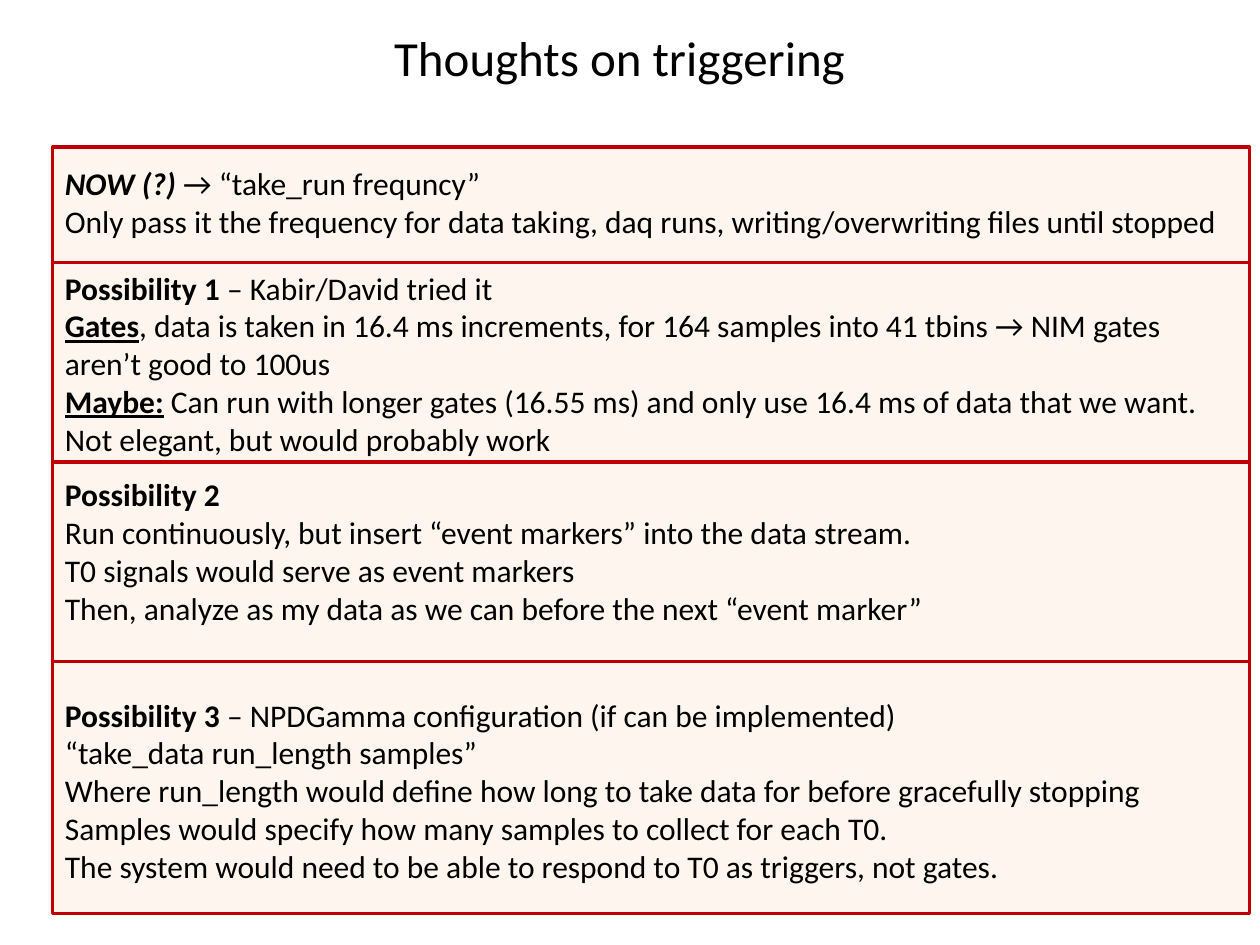
import pptx
import pptx.util
import pptx.dml.color
import pptx.enum.shapes
import pptx.enum.text
import pptx.oxml.ns
import pptx.oxml.xmlchemy

BLACK, RED, ORANGE = "000000", "C00000", "FAC090"
PLAIN, BOLD, BOLD_ITALIC, BOLD_UNDERLINE = "", "b", "bi", "bu"

SECTIONS = [
    (6, 684, [
        [("NOW (?) ", BOLD_ITALIC), ("→ “take_run frequncy”", PLAIN)],
        [("Only pass it the frequency for data taking, daq runs, "
          "writing/overwriting files until stopped", PLAIN)],
    ]),
    (66, 672, [
        [("Possibility 1", BOLD), (" – Kabir/David tried it", PLAIN)],
        [("Gates", BOLD_UNDERLINE),
         (", data is taken in 16.4 ms increments, for 164 samples into 41 tbins "
          "→ NIM gates aren’t good to 100us", PLAIN)],
        [("Maybe:", BOLD_UNDERLINE),
         (" Can run with longer gates (16.55 ms) and only use 16.4 ms of data "
          "that we want. Not elegant, but would probably work", PLAIN)],
    ]),
    (184, 672, [
        [("Possibility 2", BOLD)],
        [("Run continuously, but insert “event markers” into the data stream.", PLAIN)],
        [("T0 signals would serve as event markers", PLAIN)],
        [("Then, analyze as my data as we can before the next “event marker”", PLAIN)],
    ]),
    (310, 672, [
        [("Possibility 3", BOLD),
         (" – NPDGamma configuration (if can be implemented)", PLAIN)],
        [("“take_data run_length samples”", PLAIN)],
        [("Where run_length would define how long to take data for before "
          "gracefully stopping", PLAIN)],
        [("Samples would specify how many samples to collect for each T0.", PLAIN)],
        [("The system would need to be able to respond to T0 as triggers, not gates.",
          PLAIN)],
    ]),
]
SECTION_HEIGHTS = [51, 117, 94, 117]
DIVIDERS = [66, 180, 294]


def points(*values):
    """Return the lengths in points."""
    return [pptx.util.Pt(value) for value in values]


def color(value):
    """Return the colour for a hex string."""
    return pptx.dml.color.RGBColor.from_string(value)


def set_line(line):
    """Give a line the red border style."""
    line.color.rgb = color(RED)
    line.width = pptx.util.Pt(2)


def add_text(slide, left, top, width, height, paragraphs, size, alignment=None):
    """Add a wrapping text box made of styled runs."""
    box = slide.shapes.add_textbox(*points(left, top, width, height))
    frame = box.text_frame
    frame.word_wrap = True
    frame.auto_size = pptx.enum.text.MSO_AUTO_SIZE.SHAPE_TO_FIT_TEXT
    for index, runs in enumerate(paragraphs):
        paragraph = frame.add_paragraph() if index else frame.paragraphs[0]
        paragraph.alignment = alignment
        for text, style in runs:
            run = paragraph.add_run()
            run.text = text
            run.font.name = "Calibri"
            run.font.size = pptx.util.Pt(size)
            run.font.color.rgb = color(BLACK)
            run.font.bold = "b" in style
            run.font.italic = "i" in style
            run.font.underline = "u" in style


def add_divider(slide, left, top, width):
    """Add a horizontal line without shadow."""
    connector = slide.shapes.add_connector(
        pptx.enum.shapes.MSO_CONNECTOR.STRAIGHT, *points(left, top, left + width, top))
    set_line(connector.line)
    connector._element.spPr.append(pptx.oxml.xmlchemy.OxmlElement("a:effectLst"))


def add_title(slide, left, top, width, height):
    """Add the centred slide title."""
    add_text(slide, left, top, width, height, [[("Thoughts on triggering", PLAIN)]],
             28, pptx.enum.text.PP_ALIGN.CENTER)


def add_panel(slide, left, top, width, height):
    """Add the tinted panel with its dividers and sections."""
    panel = slide.shapes.add_shape(
        pptx.enum.shapes.MSO_SHAPE.RECTANGLE, *points(left, top, width, height))
    panel.shadow.inherit = False
    panel.fill.solid()
    panel.fill.fore_color.rgb = color(ORANGE)
    fill = panel._element.spPr.find(pptx.oxml.ns.qn("a:solidFill"))
    alpha = pptx.oxml.xmlchemy.OxmlElement("a:alpha")
    alpha.set("val", "15000")
    fill[0].append(alpha)
    set_line(panel.line)
    for offset in DIVIDERS:
        add_divider(slide, left, top + offset, width)
    for (offset, text_width, paragraphs), text_height in zip(SECTIONS, SECTION_HEIGHTS):
        add_text(slide, left, top + offset, text_width, text_height, paragraphs, 18)


def main():
    """Build and save the slide."""
    presentation = pptx.Presentation()
    presentation.slide_width, presentation.slide_height = points(720, 540)
    slide = presentation.slides.add_slide(presentation.slide_layouts[6])
    add_panel(slide, 30, 84, 684, 438)
    add_title(slide, 54, 12, 600, 41)
    presentation.save("out.pptx")


if __name__ == "__main__":
    main()
